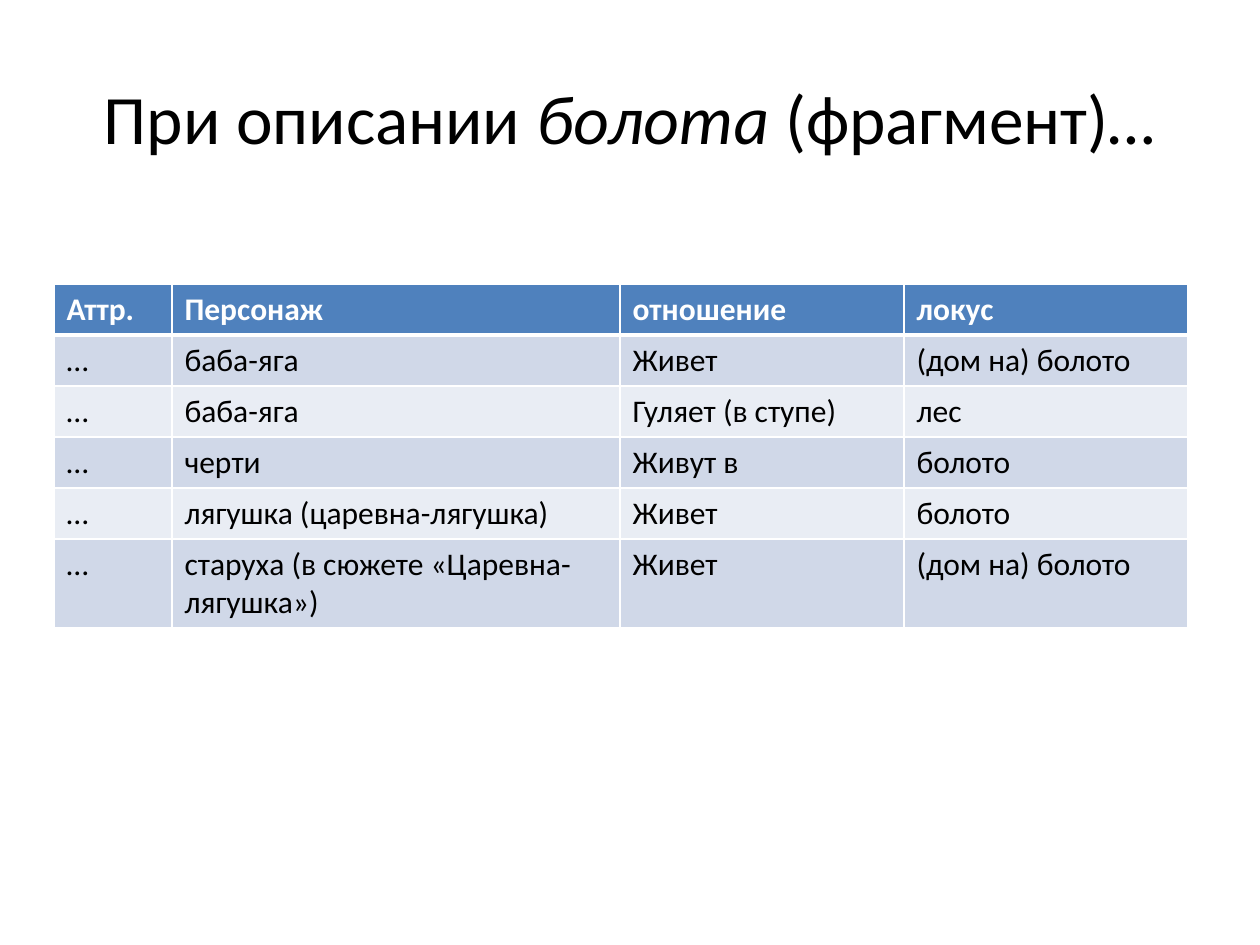
from lxml.etree import SubElement
from pptx import Presentation
from pptx.dml.color import RGBColor
from pptx.enum.text import MSO_ANCHOR as Anchor, PP_ALIGN as Align
from pptx.oxml.ns import qn
from pptx.util import Emu, Pt

PX = 914400 / 126
FONT = "Calibri"
COLORS = {
    "text": "000000",
    "header": "4F81BD",
    "header_text": "FFFFFF",
    "odd_row": "D0D8E8",
    "even_row": "E9EDF4",
    "border": "FFFFFF",
}

HEADING = [("При описании ", False), ("болота ", True), ("(фрагмент)", False), ("…", True)]
RELATIONS = [
    ("Аттр.", "Персонаж", "отношение", "локус"),
    ("…", "баба-яга", "Живет", "(дом на) болото"),
    ("…", "баба-яга", "Гуляет (в ступе)", "лес"),
    ("…", "черти", "Живут в", "болото"),
    ("…", "лягушка (царевна-лягушка)", "Живет", "болото"),
    ("…", "старуха (в сюжете «Царевна-лягушка»)", "Живет", "(дом на) болото"),
]
COLUMN_WIDTHS = (118, 448, 284, 284)
ROW_HEIGHTS = (51, 51, 51, 51, 51, 89)


def px(length):
    return Emu(round(length * PX))


def add_run(paragraph, text, color, **font_format):
    run = paragraph.add_run()
    run.text = text
    run.font.color.rgb = RGBColor.from_string(COLORS[color])
    for attribute, value in {"name": FONT, **font_format}.items():
        setattr(run.font, attribute, value)


def set_borders(cell, widths):
    properties = cell._tc.get_or_add_tcPr()
    for side, width in widths.items():
        line = SubElement(properties, qn(f"a:ln{side}"), w=str(Pt(width)))
        fill = SubElement(line, qn("a:solidFill"))
        SubElement(fill, qn("a:srgbClr"), val=COLORS["border"])


def add_heading(slide, box):
    heading = slide.shapes.add_textbox(*map(px, box)).text_frame
    heading.word_wrap = True
    heading.vertical_anchor = Anchor.MIDDLE
    paragraph = heading.paragraphs[0]
    paragraph.alignment = Align.CENTER
    for text, italic in HEADING:
        add_run(paragraph, text, "text", size=Pt(39.6), italic=italic)


def add_relations(slide, box):
    grid = slide.shapes.add_table(len(RELATIONS), len(COLUMN_WIDTHS), *map(px, box)).table
    for column, width in zip(grid.columns, COLUMN_WIDTHS):
        column.width = px(width)
    for row, height in zip(grid.rows, ROW_HEIGHTS):
        row.height = px(height)
    for row_index, relation in enumerate(RELATIONS):
        is_header = row_index == 0
        band = "header" if is_header else "odd_row" if row_index % 2 else "even_row"
        text_color = "header_text" if is_header else "text"
        borders = {"L": 1, "R": 1, "T": 3 if row_index == 1 else 1, "B": 3 if is_header else 1}
        for column_index, text in enumerate(relation):
            cell = grid.cell(row_index, column_index)
            set_borders(cell, borders)
            cell.fill.solid()
            cell.fill.fore_color.rgb = RGBColor.from_string(COLORS[band])
            add_run(cell.text_frame.paragraphs[0], text, text_color, size=Pt(18), bold=is_header)


def main():
    deck = Presentation()
    deck.slide_width, deck.slide_height = px(1260), px(945)
    slide = deck.slides.add_slide(deck.slide_layouts[6])
    add_heading(slide, (63, 38, 1134, 157))
    add_relations(slide, (54, 284, sum(COLUMN_WIDTHS), sum(ROW_HEIGHTS)))
    deck.save("out.pptx")


if __name__ == "__main__":
    main()
